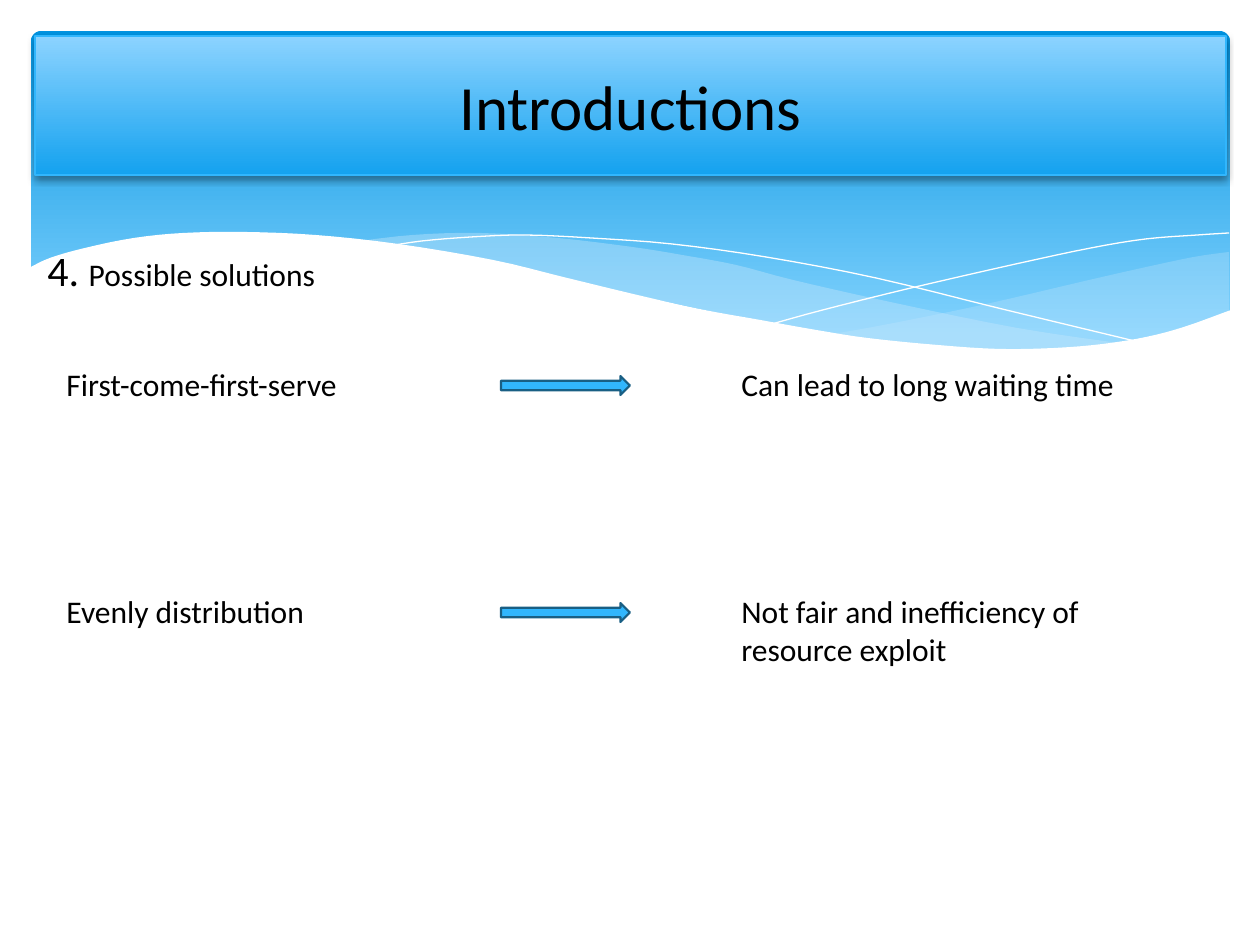
import pptx
import pptx.dml.color
import pptx.enum.shapes
import pptx.enum.text
import pptx.oxml
import pptx.oxml.ns
import pptx.util

SCALE = 914400 / 126
SHAPES = pptx.enum.shapes.MSO_SHAPE
ALIGN = pptx.enum.text.PP_ALIGN
ANCHOR = pptx.enum.text.MSO_ANCHOR
GROW = pptx.enum.text.MSO_AUTO_SIZE.SHAPE_TO_FIT_TEXT

RIGHT_WAVE = [
    [(1229, 252), (1194, 257), (1142, 268), (1085, 281), (982, 305), (889, 324), (833, 334)],
    [(833, 334), (888, 341), (954, 348), (1025, 350), (1087, 347), (1140, 338), (1187, 327),
     (1229, 311)],
]
MIDDLE_WAVE = [
    [(1125, 344), (1017, 328), (890, 302), (793, 280), (736, 265), (682, 255), (632, 247),
     (557, 238), (479, 233), (413, 235), (360, 241)],
    [(360, 241), (431, 251), (509, 266), (566, 280), (668, 302), (757, 321), (838, 335),
     (910, 345), (973, 349), (1030, 350), (1080, 349), (1125, 344)],
]
FALLING_LINE = [[(389, 246), (422, 241), (471, 237), (524, 235), (591, 238), (672, 244),
                 (766, 257), (876, 278), (1002, 309), (1143, 343)]]
RISING_LINE = [[(772, 324), (823, 310), (907, 289), (1016, 264), (1091, 248), (1146, 239),
                (1198, 235), (1229, 233)]]
WHITE_WAVE = [
    [(29, 268), (50, 258), (85, 248), (134, 238), (184, 233), (243, 232), (315, 235),
     (398, 244), (493, 260), (563, 277), (633, 294), (699, 309), (760, 320), (816, 330),
     (867, 338), (937, 345), (999, 349), (1055, 348), (1103, 344), (1146, 337), (1184, 327),
     (1231, 310)],
    [(1231, 310), (1231, 415)],
    [(1231, 415), (29, 415)],
]


def px(length):
    """Turn px into EMU."""
    return pptx.util.Emu(round(length * SCALE))


def color(value):
    """Turn a hex string into a colour."""
    return pptx.dml.color.RGBColor.from_string(value)


def smooth(knots, steps=4):
    """Return points on a Catmull-Rom curve through the knots."""
    padded = [knots[0], *knots, knots[-1]]
    points = [knots[0]]
    for a, b, c, d in zip(padded, padded[1:], padded[2:], padded[3:]):
        for step in range(1, steps + 1):
            t = step / steps
            points.append(tuple(
                (2 * q + (r - p) * t + (2 * p - 5 * q + 4 * r - s) * t ** 2
                 + (3 * q - p - 3 * r + s) * t ** 3) / 2
                for p, q, r, s in zip(a, b, c, d)))
    return points


class SlideBuilder:
    """Hold the style and the current slide."""

    font_format = {"name": "Calibri", "size": pptx.util.Pt(18)}
    frame_format = {"word_wrap": True, "auto_size": GROW}
    title_format = {"word_wrap": True, "vertical_anchor": ANCHOR.MIDDLE}
    text_color = "000000"

    def __init__(self, deck):
        """Add a blank slide to the deck."""
        self.slide = deck.slides.add_slide(deck.slide_layouts[6])

    def paint(self, shape, fill=None, line=None, width=0, alpha=None):
        """Set fill, outline and transparency, and drop the shadow."""
        shape.shadow.inherit = False
        if isinstance(fill, list):
            shape.fill.gradient()
            shape.fill.gradient_angle = 270
            for stop, (position, value) in zip(shape.fill.gradient_stops, fill):
                stop.position = position
                stop.color.rgb = color(value)
        elif fill:
            shape.fill.solid()
            shape.fill.fore_color.rgb = color(fill)
        else:
            shape.fill.background()
        if alpha:
            tint = shape._element.spPr.find(".//" + pptx.oxml.ns.qn("a:srgbClr"))
            tint.append(pptx.oxml.parse_xml(
                f'<a:alpha {pptx.oxml.ns.nsdecls("a")} val="{alpha * 1000}"/>'))
        if line:
            shape.line.color.rgb = color(line)
            shape.line.width = pptx.util.Pt(width)
        else:
            shape.line.fill.background()

    def shape(self, kind, place, **style):
        """Add a preset shape."""
        shape = self.slide.shapes.add_shape(kind, *map(px, place))
        self.paint(shape, **style)
        return shape

    def wave(self, curves, close=True, **style):
        """Add an outline made of smooth curves."""
        points = [(px(x), px(y)) for curve in curves for x, y in smooth(curve)]
        builder = self.slide.shapes.build_freeform(*points[0])
        builder.add_line_segments(points[1:], close=close)
        self.paint(builder.convert_to_shape(), **style)

    def cast_shadow(self, shape):
        """Add a soft shadow below the shape."""
        effects = shape._element.spPr.find(pptx.oxml.ns.qn("a:effectLst"))
        effects.append(pptx.oxml.parse_xml(
            f'<a:outerShdw {pptx.oxml.ns.nsdecls("a")} blurRad="50800" dist="25400" '
            'dir="5400000" rotWithShape="0"><a:srgbClr val="000000">'
            '<a:alpha val="38000"/></a:srgbClr></a:outerShdw>'))

    def fill_text(self, shape, runs, frame_format, align=ALIGN.LEFT):
        """Put (text, size) runs into one paragraph."""
        frame = shape.text_frame
        for name, value in frame_format.items():
            setattr(frame, name, value)
        para = frame.paragraphs[0]
        para.alignment = align
        for text, size in runs:
            span = para.add_run()
            span.text = text
            for name, value in {**self.font_format, "size": pptx.util.Pt(size)}.items():
                setattr(span.font, name, value)
            span.font.color.rgb = color(self.text_color)

    def title(self, text, place, **style):
        """Add the title bar."""
        bar = self.shape(SHAPES.RECTANGLE, place, **style)
        self.cast_shadow(bar)
        self.fill_text(bar, [(text, 36)], self.title_format, ALIGN.CENTER)

    def text(self, place, *runs):
        """Add a text box."""
        box = self.slide.shapes.add_textbox(*map(px, place))
        self.fill_text(box, runs, self.frame_format)


def main():
    """Build the slide and save it."""
    deck = pptx.Presentation()
    deck.slide_width, deck.slide_height = px(1260), px(945)
    page = SlideBuilder(deck)

    banner = page.shape(SHAPES.ROUNDED_RECTANGLE, (31, 31, 1199, 340),
                        fill=[(0, "0293E0"), (0.9, "83D3FE")])
    banner.adjustments[0] = 0.03
    page.wave(RIGHT_WAVE, fill="C6E7FC", alpha=29)
    page.wave(MIDDLE_WAVE, fill="C6E7FC", alpha=40)
    for curve in (FALLING_LINE, RISING_LINE):
        page.wave(curve, close=False, line="FFFFFF")
    page.wave(WHITE_WAVE, fill="FFFFFF")

    page.title("Introductions", (35, 36, 1191, 139),
               fill=[(0, "8CD3FF"), (1, "14A2EF")], line="31B6FD", width=0.75)
    page.text((35, 238, 556, 63), ("4. ", 24), ("Possible solutions", 18))

    solutions = [
        (359, "First-come-first-serve", "Can lead to long waiting time", 50),
        (586, "Evenly distribution", "Not fair and inefficiency of resource exploit", 89),
    ]
    for top, solution, drawback, height in solutions:
        page.text((54, top, 387, 50), (solution, 18))
        page.shape(SHAPES.RIGHT_ARROW, (501, top + 17, 129, 19),
                   fill="31B6FD", line="195F84", width=1.25)
        page.text((729, top, 427, height), (drawback, 18))

    deck.save("out.pptx")


if __name__ == "__main__":
    main()
